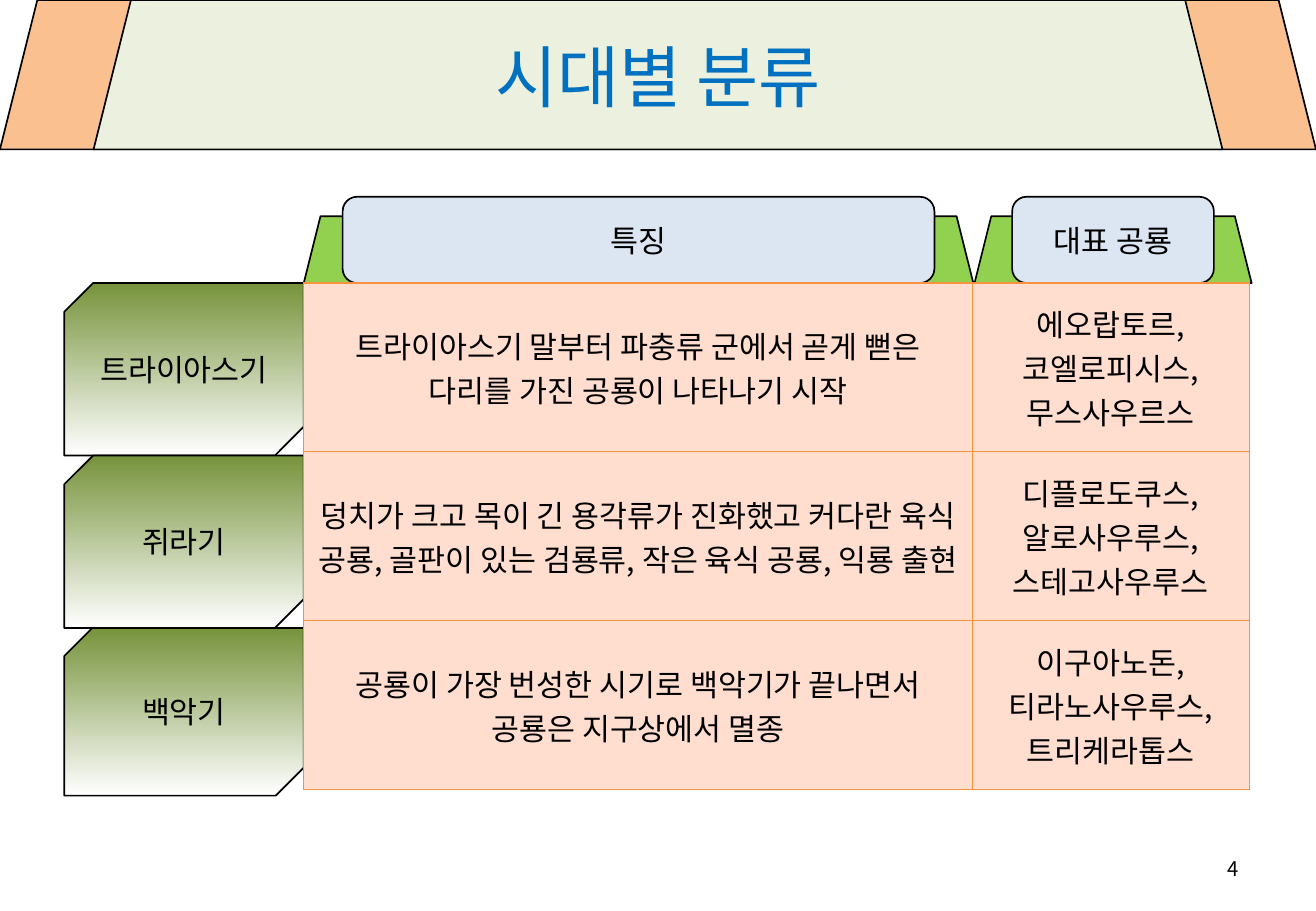
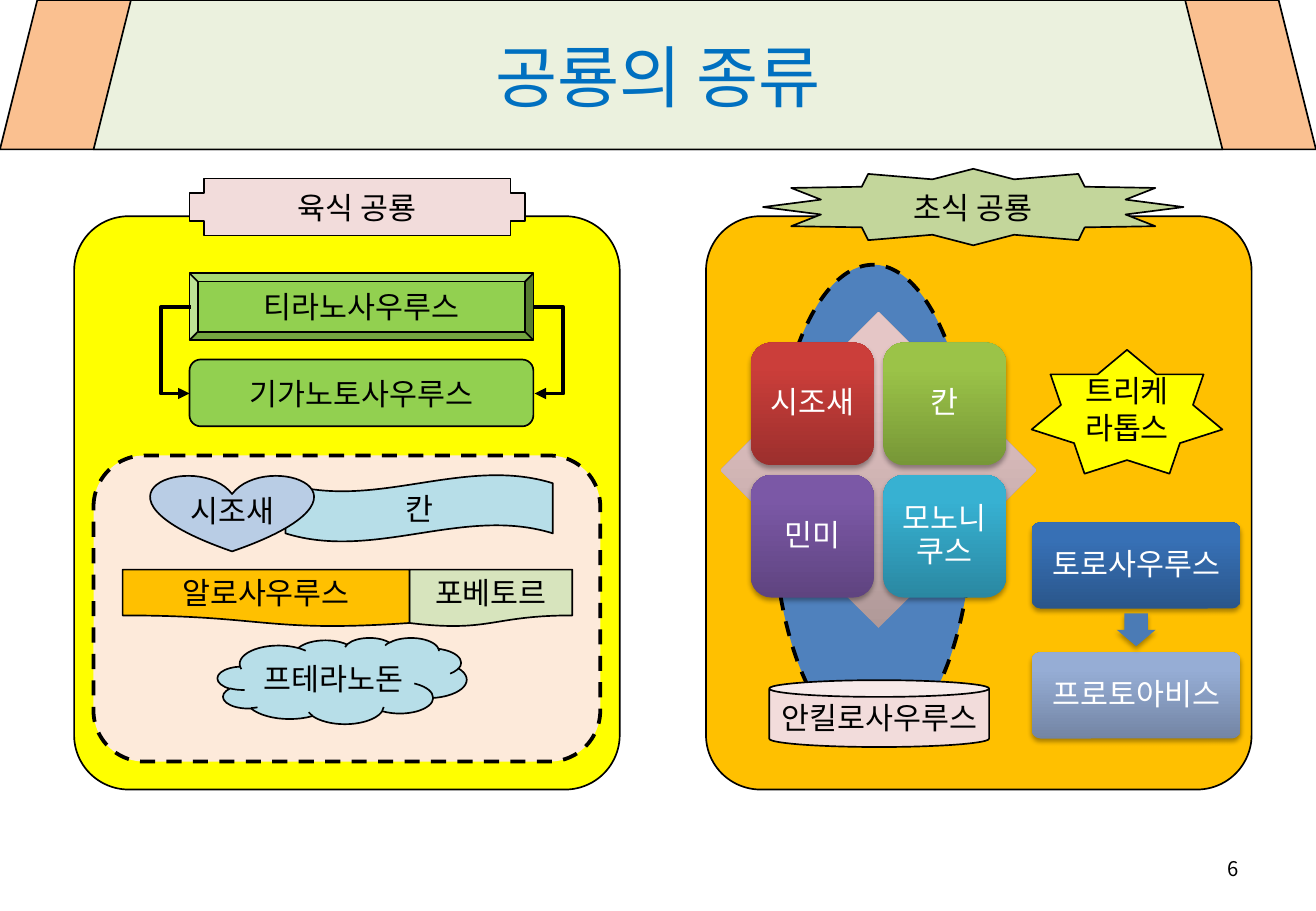
import dataclasses

import lxml.etree
import pptx
import pptx.dml.color
import pptx.enum.dml
import pptx.enum.shapes
import pptx.enum.text
import pptx.oxml.ns
import pptx.util

Inches = pptx.util.Inches
Pt = pptx.util.Pt
KIND = pptx.enum.shapes.MSO_SHAPE
ALIGN = pptx.enum.text.PP_ALIGN
MIDDLE = pptx.enum.text.MSO_ANCHOR.MIDDLE
qn = pptx.oxml.ns.qn


@dataclasses.dataclass(frozen=True)
class Theme:
    font: str = "Noto Sans CJK KR"
    title: int = 40
    body: int = 18
    small: int = 12
    line: float = 1
    thick: float = 2.25
    hair: float = 0.75
    ink: str = "000000"
    white: str = "FFFFFF"
    blue: str = "0070C0"
    peach: str = "FAC090"
    cream: str = "EBF1DE"
    lime: str = "92D050"
    ice: str = "DCE6F2"
    olive: str = "77933C"
    cell: str = "FFDED0"
    rule: str = "F69240"
    yellow: str = "FFFF00"
    amber: str = "FFC000"
    pink: str = "F2DCDB"
    sand: str = "FDEADA"
    aqua: str = "B7DEE8"
    sky: str = "B9CDE5"
    sage: str = "D7E4BD"
    leaf: str = "C3D69B"
    steel: str = "4F81BD"
    arrow: str = "4B7BB5"
    # Gradients run from the dark foot to the light top
    rose: tuple = ("B09998", "E5C6C6")
    red: tuple = ("9C2F2D", "CB3E3A")
    green: tuple = ("779737", "9BC348")
    plum: tuple = ("5F4480", "7B58A6")
    teal: tuple = ("2A88A2", "37B1D2")
    navy: tuple = ("2A568B", "3770B5")
    slate: tuple = ("7385A4", "96ADD5")


T = Theme()


def rgb(code):
    return pptx.dml.color.RGBColor.from_string(code)


def node(parent, tag, **attrs):
    child = lxml.etree.SubElement(parent, qn(tag))
    for name, value in attrs.items():
        child.set(name, str(value))
    return child


# Text
def write(frame, lines, size=T.body, color=T.ink, align=ALIGN.CENTER, space=None):
    for i, line in enumerate(lines):
        para = frame.paragraphs[0] if i == 0 else frame.add_paragraph()
        para.alignment = align
        if space:
            para.line_spacing = space
        run = para.add_run()
        run.text = line
        run.font.size = Pt(size)
        run.font.name = T.font
        run.font.color.rgb = rgb(color)
        node(run.font._element, "a:ea", typeface=T.font)


def label(slide, at, text, **style):
    frame = slide.shapes.add_textbox(*map(Inches, at)).text_frame
    frame.word_wrap = True
    frame.vertical_anchor = MIDDLE
    write(frame, [text], **style)


# Shapes
def blend(shape, first, last, angle=90, stop=0.8):
    fill = shape.fill
    fill.gradient()
    fill.gradient_angle = angle
    start, end = fill.gradient_stops
    start.color.rgb, end.color.rgb = rgb(first), rgb(last)
    end.position = stop


def draw(place, kind, at, fill, lines=(), line=T.line, dash=False, flip=False,
         adjust=(), wrap=False):
    shape = place.add_shape(kind, *map(Inches, at))
    shape.shadow.inherit = False
    if isinstance(fill, tuple):
        blend(shape, *fill)
    else:
        shape.fill.solid()
        shape.fill.fore_color.rgb = rgb(fill)
    if line:
        shape.line.color.rgb = rgb(T.ink)
        shape.line.width = Pt(line)
    else:
        shape.line.fill.background()
    if dash:
        shape.line.dash_style = pptx.enum.dml.MSO_LINE.DASH
    if flip:
        shape.element.spPr.find(qn("a:xfrm")).set("flipH", "1")
    for i, value in enumerate(adjust):
        shape.adjustments[i] = value
    shape.text_frame.word_wrap = wrap
    shape.text_frame.vertical_anchor = MIDDLE
    write(shape.text_frame, lines)
    return shape


def shade(shape):
    effect = shape.element.spPr.find(qn("a:effectLst"))
    outer = node(effect, "a:outerShdw", blurRad=Pt(3.1), dist=Pt(1.8),
                 dir=5400000, rotWithShape=0)
    node(node(outer, "a:srgbClr", val=T.ink), "a:alpha", val=35000)


def card(place, at, fill, text, adjust=()):
    shape = draw(place, KIND.ROUNDED_RECTANGLE, at, fill, line=None,
                 adjust=adjust, wrap=True)
    shade(shape)
    frame = shape.text_frame
    frame.margin_left = frame.margin_right = Inches(0.07)
    frame.margin_top = frame.margin_bottom = Inches(0.07)
    write(frame, [text], color=T.white, space=0.9)


def bend(place, start, end, reach):
    """Elbow arrow that swings out by reach and turns back to its end."""
    link = place.add_connector(pptx.enum.shapes.MSO_CONNECTOR.ELBOW,
                               *map(Inches, start + end))
    link.line.color.rgb = rgb(T.ink)
    link.line.width = Pt(T.thick)
    ratio = round(reach / abs(end[0] - start[0]) * 100000)
    node(link.element.find(".//" + qn("a:avLst")), "a:gd",
         name="adj1", fmla=f"val {ratio}")
    node(link.line._get_or_add_ln(), "a:tailEnd", type="triangle")
    node(link.element.spPr, "a:effectLst")


# Table
def frame_cell(cell):
    props = cell._tc.get_or_add_tcPr()
    for i, side in enumerate("LRTB"):
        edge = lxml.etree.Element(qn(f"a:ln{side}"), w=str(Pt(T.hair)))
        node(node(edge, "a:solidFill"), "a:srgbClr", val=T.rule)
        props.insert(i, edge)


def grid(slide, left, top, widths, height, rows):
    table = slide.shapes.add_table(
        len(rows), len(widths), Inches(left), Inches(top),
        Inches(sum(widths)), Inches(height * len(rows))).table
    table.first_row = table.horz_banding = False
    for col, width in zip(table.columns, widths):
        col.width = Inches(width)
    for r, row in enumerate(rows):
        table.rows[r].height = Inches(height)
        for c, lines in enumerate(row):
            cell = table.cell(r, c)
            cell.vertical_anchor = MIDDLE
            cell.fill.solid()
            cell.fill.fore_color.rgb = rgb(T.cell)
            frame_cell(cell)
            write(cell.text_frame, lines)


# Shared bands, title and page number
def set_bands(layout, slide):
    for holder in list(layout.placeholders):
        layout.shapes.element.remove(holder.element)
    for left, width, fill in ((0, 10.83, T.peach), (0.77, 9.29, T.cream)):
        band = draw(slide.shapes, KIND.TRAPEZOID, (left, 0, width, 1.23), fill)
        layout.shapes.element.append(band.element)


def head(slide, title, page):
    label(slide, (0.54, 0, 9.75, 1.25), title, size=T.title, color=T.blue)
    label(slide, (7.76, 6.95, 2.53, 0.4), page, size=T.small, align=ALIGN.RIGHT)


# Slide: eras
def show_eras(slide):
    head(slide, "시대별 분류", "4")
    for left, width, inset, text in ((2.5, 5.51, 0.32, "특징"),
                                     (8.02, 2.28, 0.31, "대표 공룡")):
        draw(slide.shapes, KIND.TRAPEZOID, (left, 1.78, width, 0.55), T.lime)
        draw(slide.shapes, KIND.ROUNDED_RECTANGLE,
             (left + inset, 1.62, width - 2 * inset, 0.71), T.ice, [text])
    top = 2.33
    for text, height in (("트라이아스기", 1.42), ("쥐라기", 1.42), ("백악기", 1.38)):
        draw(slide.shapes, KIND.SNIP_2_DIAG_RECTANGLE, (0.53, top, 1.97, height),
             (T.olive, T.white, 270, 1), [text], flip=True)
        top += height
    grid(slide, 2.5, 2.33, (5.5, 2.28), 1.39, [
        (["트라이아스기 말부터 파충류 군에서 곧게 뻗은 다리를 가진 공룡이 나타나기 시작"],
         ["에오랍토르,", "코엘로피시스,", "무스사우르스"]),
        (["덩치가 크고 목이 긴 용각류가 진화했고 커다란 육식 공룡, "
          "골판이 있는 검룡류, 작은 육식 공룡, 익룡 출현"],
         ["디플로도쿠스,", "알로사우루스,", "스테고사우루스"]),
        (["공룡이 가장 번성한 시기로 백악기가 끝나면서 공룡은 지구상에서 멸종"],
         ["이구아노돈,", "티라노사우루스,", "트리케라톱스"]),
    ])


# Slide: kinds
def panel(slide, left, fill):
    place = slide.shapes.add_group_shape().shapes
    draw(place, KIND.ROUNDED_RECTANGLE, (left, 1.78, 4.49, 4.72), fill, adjust=(0.1,))
    return place


def show_meat(slide):
    place = panel(slide, 0.61, T.yellow)
    draw(place, KIND.CROSS, (1.56, 1.47, 2.76, 0.47), T.pink, ["육식 공룡"])
    draw(place, KIND.BEVEL, (1.56, 2.25, 2.83, 0.55), T.lime, ["티라노사우루스"])
    draw(place, KIND.ROUNDED_RECTANGLE, (1.56, 2.96, 2.83, 0.55), T.lime,
         ["기가노토사우루스"])
    for start, end in ((1.57, 1.56), (4.39, 4.4)):
        bend(place, (start, 2.53), (end, 3.24), 0.25)
    draw(place, KIND.ROUNDED_RECTANGLE, (0.77, 3.75, 4.17, 2.52), T.sand,
         line=T.thick, dash=True)
    draw(place, KIND.WAVE, (2.35, 3.91, 2.2, 0.55), T.aqua, ["칸"], flip=True)
    draw(place, KIND.HEART, (1.24, 3.91, 1.34, 0.63), T.sky, ["시조새"])
    draw(place, KIND.FLOWCHART_DOCUMENT, (3.37, 4.69, 1.34, 0.47), T.sage, ["포베토르"])
    draw(place, KIND.FLOWCHART_DOCUMENT, (1.01, 4.69, 2.36, 0.47), T.amber,
         ["알로사우루스"], flip=True)
    draw(place, KIND.CLOUD, (1.79, 5.25, 2.05, 0.71), T.aqua, ["프테라노돈"])


def show_plant(slide):
    place = panel(slide, 5.81, T.amber)
    draw(place, KIND.STAR_12_POINT, (6.28, 1.39, 3.46, 0.63), T.leaf, ["초식 공룡"])
    draw(place, KIND.OVAL, (6.36, 2.18, 1.65, 3.94), T.steel, line=T.thick, dash=True)
    # Four cards on a diamond
    draw(place, KIND.DIAMOND, (5.93, 2.57, 2.6, 2.6), T.rose, line=None)
    cards = ((T.red, "시조새"), (T.green, "칸"), (T.plum, "민미"), (T.teal, "모노니쿠스"))
    for i, (fill, text) in enumerate(cards):
        row, col = divmod(i, 2)
        card(place, (6.18 + 1.09 * col, 2.82 + 1.09 * row, 1.01, 1.01), fill, text)
    draw(place, KIND.CAN, (6.33, 5.6, 1.81, 0.55), T.pink, ["안킬로사우루스"])
    # Two steps with an arrow between
    for top, fill, text in ((4.3, T.navy, "토로사우루스"), (5.37, T.slate, "프로토아비스")):
        card(place, (8.49, top, 1.72, 0.71), fill, text, adjust=(0.1,))
    shade(draw(place, KIND.DOWN_ARROW, (9.19, 5.05, 0.32, 0.27), T.arrow,
               line=None, adjust=(0.6, 0.5)))
    draw(place, KIND.STAR_7_POINT, (8.49, 2.88, 1.57, 1.02), T.yellow,
         ["트리케", "라톱스"])


def show_kinds(slide):
    head(slide, "공룡의 종류", "6")
    show_meat(slide)
    show_plant(slide)


def main():
    deck = pptx.Presentation()
    deck.slide_width, deck.slide_height = Inches(10.83), Inches(7.5)
    blank = deck.slide_layouts[6]
    eras, kinds = (deck.slides.add_slide(blank) for _ in range(2))
    set_bands(blank, eras)
    show_eras(eras)
    show_kinds(kinds)
    deck.save("out.pptx")


if __name__ == "__main__":
    main()
